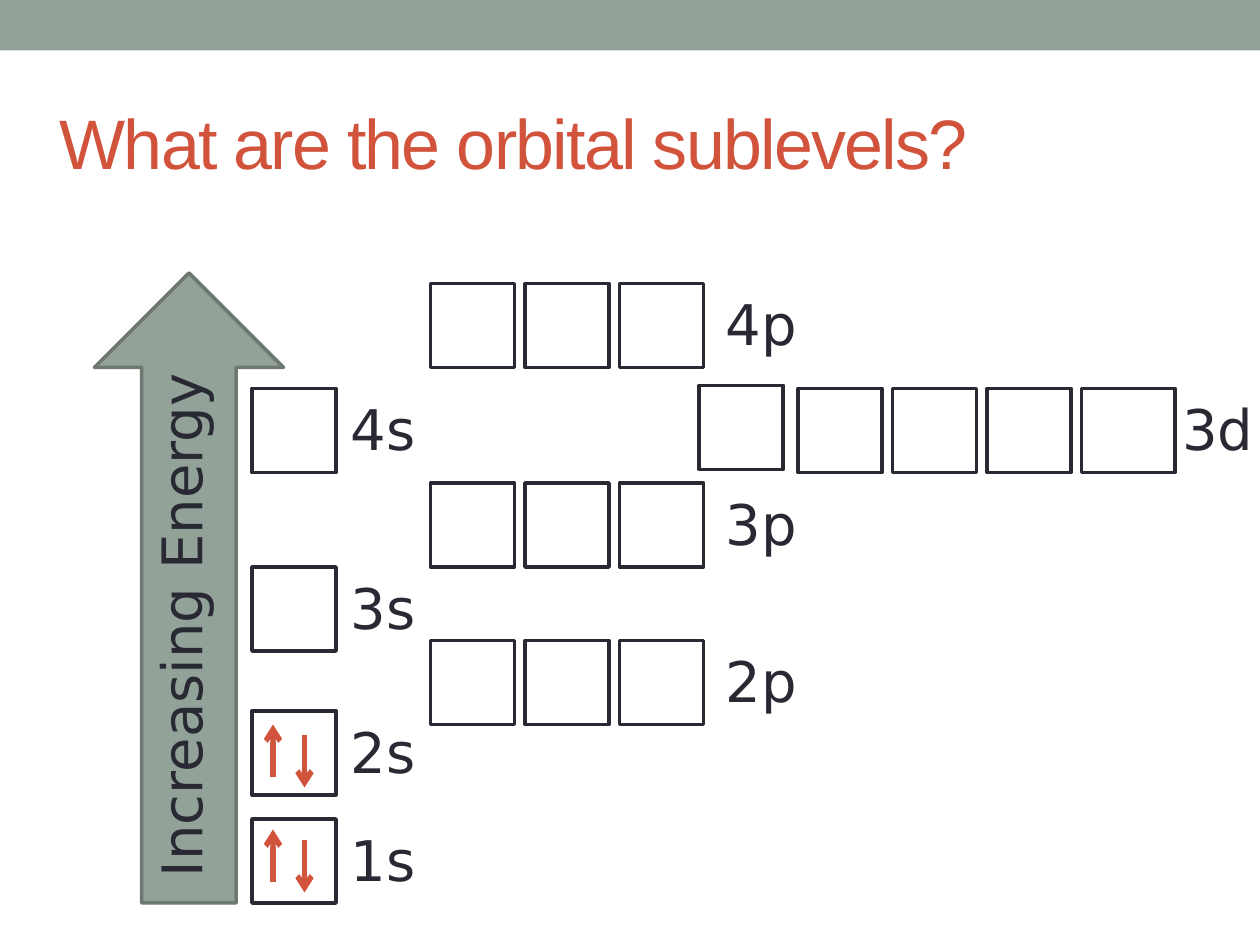
from dataclasses import dataclass

from lxml import etree
from pptx import Presentation
from pptx.dml.color import RGBColor
from pptx.enum.shapes import MSO_CONNECTOR, MSO_SHAPE
from pptx.enum.text import MSO_ANCHOR, PP_ALIGN
from pptx.oxml.ns import qn
from pptx.util import Inches, Pt

RECT = MSO_SHAPE.RECTANGLE
BOX = MSO_SHAPE.FLOWCHART_PROCESS
ARROW = MSO_SHAPE.UP_ARROW
LINE = MSO_CONNECTOR.STRAIGHT
MID, TOP = MSO_ANCHOR.MIDDLE, MSO_ANCHOR.TOP
LEFT, MAIN = PP_ALIGN.LEFT, PP_ALIGN.CENTER

SAGE, EDGE, INK, RED = "93A299", "6D7871", "292934", "D2533C"
SANS = "DejaVu Sans"
CELL = 1 / 12
SIDE, STEP, HIGH = 8, 9, 7.7


@dataclass
class Level:
    name: str
    col: float
    row: float
    count: int
    span: float
    last: float = SIDE


@dataclass
class Spin:
    col: float
    start: float
    end: float


LEVELS = [
    Level("1s", 24, 78, 1, 9),
    Level("2s", 24, 67.7, 1, 9),
    Level("2p", 41, 61, 3, 11),
    Level("3s", 24, 54, 1, 9),
    Level("3p", 41, 46, 3, 11),
    Level("4s", 24, 37, 1, 9),
    Level("3d", 76, 37, 4, 10, 8.9),
    Level("4p", 41, 27, 3, 11),
]
PAIR = [Spin(26, 5, 0), Spin(29, 1, 6)]
PAIR_ROWS = [79, 69]


def grid(*cells: float) -> list[int]:
    return [Inches(cell * CELL) for cell in cells]


def tint(code: str) -> RGBColor:
    return RGBColor.from_string(code)


def add_form(slide, kind, area, fill: str = "", edge: str = ""):
    form = slide.shapes.add_shape(kind, *grid(*area))
    form.shadow.inherit = False
    if fill:
        form.fill.solid()
        form.fill.fore_color.rgb = tint(fill)
    else:
        form.fill.background()
    if edge:
        form.line.color.rgb = tint(edge)
        form.line.width = Pt(2.08)
    else:
        form.line.fill.background()
    return form


def add_text(slide, text: str, area, size: float = 32, font: str = SANS,
             ink: str = INK, align=MAIN, anchor=TOP):
    box = slide.shapes.add_textbox(*grid(*area))
    frame = box.text_frame
    frame.text = text
    frame.word_wrap = True
    frame.vertical_anchor = anchor
    line = frame.paragraphs[0]
    line.alignment = align
    face = line.runs[0].font
    face.size, face.name = Pt(size), font
    face.color.rgb = tint(ink)
    return box


def add_level(slide, level: Level) -> None:
    final = level.count - 1
    for spot in range(level.count):
        width = level.last if spot == final else SIDE
        add_form(slide, BOX, (level.col + spot * STEP, level.row, width, SIDE), edge=INK)
    edge = level.col + final * STEP + SIDE
    add_text(slide, level.name, (edge, level.row, level.span, HIGH))


def add_spin(slide, spin: Spin, row: float) -> None:
    ends = grid(spin.col, row + spin.start, spin.col, row + spin.end)
    line = slide.shapes.add_connector(LINE, *ends)
    line.line.color.rgb = tint(RED)
    line.line.width = Pt(3)
    etree.SubElement(line.line._get_or_add_ln(), qn("a:tailEnd"), type="arrow")
    etree.SubElement(line._element.spPr, qn("a:effectLst"))


def main() -> None:
    deck = Presentation()
    deck.slide_width, deck.slide_height = Inches(10), Inches(7.5)
    slide = deck.slides.add_slide(deck.slide_layouts[6])

    add_form(slide, RECT, (0, 0, 120, 4.8), SAGE)
    title = add_text(slide, "What are the orbital sublevels?", (4.5, 6, 102, 15),
                     40, "Arial", RED, LEFT, MID)
    title.text_frame.paragraphs[0].runs[0].font._element.set("spc", "-100")

    add_form(slide, ARROW, (9, 26, 18, 60), SAGE, EDGE)
    label = add_text(slide, "Increasing Energy", (-8.3, 55.7, 51, HIGH))
    label.rotation = 270

    for level in LEVELS:
        add_level(slide, level)
    add_form(slide, BOX, (66.6, 36.7, SIDE, SIDE), edge=INK)

    for row in PAIR_ROWS:
        for spin in PAIR:
            add_spin(slide, spin, row)

    deck.save("out.pptx")


if __name__ == "__main__":
    main()
